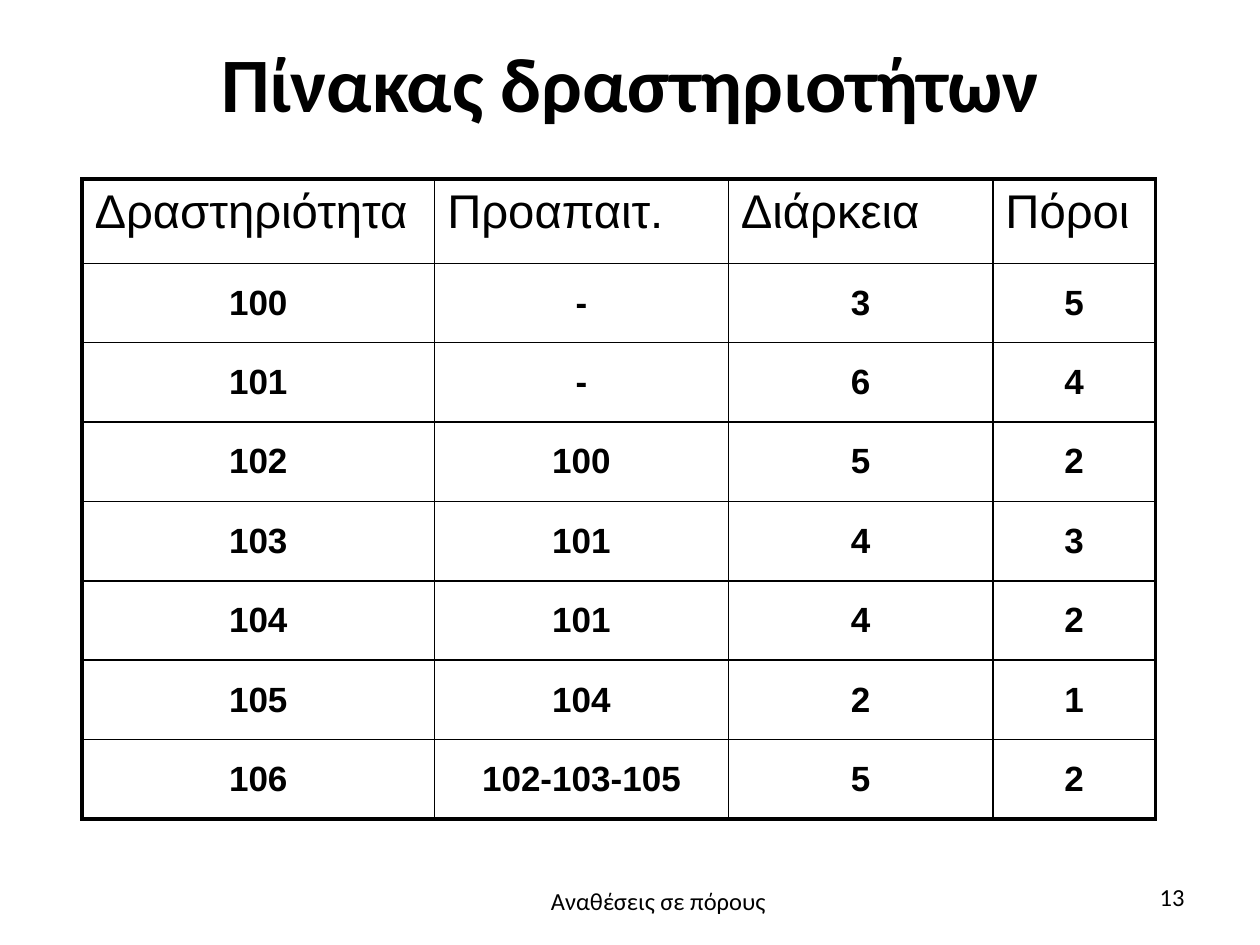
from lxml import etree
from pptx import Presentation
from pptx.dml.color import RGBColor
from pptx.enum.text import MSO_ANCHOR as Anchor, PP_ALIGN as Align
from pptx.oxml.ns import qn
from pptx.util import Inches, Pt

COLORS = {"text": "000000", "border": "000000", "background": "FFFFFF"}
HEADERS = ["Δραστηριότητα", "Προαπαιτ.", "Διάρκεια", "Πόροι"]
ACTIVITIES = [
    ["100", "-", "3", "5"],
    ["101", "-", "6", "4"],
    ["102", "100", "5", "2"],
    ["103", "101", "4", "3"],
    ["104", "101", "4", "2"],
    ["105", "104", "2", "1"],
    ["106", "102-103-105", "5", "2"],
]
COLUMN_WIDTHS = [2.8, 2.33, 2.1, 1.29]
HEADER_HEIGHT, ROW_HEIGHT = 0.67, 0.63
OUTER_LINE, INNER_LINE = 2.25, 1


def write_text(frame, text, size, font="Calibri", bold=False, align=Align.LEFT):
    paragraph = frame.paragraphs[0]
    paragraph.alignment = align
    run = paragraph.add_run()
    run.text = text
    run.font.name = font
    run.font.size = Pt(size)
    run.font.bold = bold
    run.font.color.rgb = RGBColor.from_string(COLORS["text"])


def set_borders(cell, widths):
    """Draw the cell's sides, given as (L, R, T, B) widths in points."""
    properties = cell._tc.get_or_add_tcPr()
    for index, (side, width) in enumerate(zip("LRTB", widths)):
        line = etree.Element(qn(f"a:ln{side}"), w=str(Pt(width)))
        fill = etree.SubElement(line, qn("a:solidFill"))
        etree.SubElement(fill, qn("a:srgbClr"), val=COLORS["border"])
        properties.insert(index, line)


def add_title(slide, left, top, width, height):
    title = slide.shapes.title
    title.left, title.top = Inches(left), Inches(top)
    title.width, title.height = Inches(width), Inches(height)
    frame = title.text_frame
    frame.word_wrap = True
    frame.vertical_anchor = Anchor.MIDDLE
    frame.margin_left = frame.margin_right = frame.margin_bottom = 0
    frame.margin_top = Inches(0.02)
    write_text(frame, "Πίνακας δραστηριοτήτων", 44, bold=True, align=Align.CENTER)


def add_activity_table(slide, left, top):
    rows = [HEADERS] + ACTIVITIES
    heights = [HEADER_HEIGHT] + [ROW_HEIGHT] * len(ACTIVITIES)
    table = slide.shapes.add_table(
        len(rows), len(HEADERS), Inches(left), Inches(top),
        Inches(sum(COLUMN_WIDTHS)), Inches(sum(heights))).table
    table.first_row = table.horz_banding = False
    for column, width in zip(table.columns, COLUMN_WIDTHS):
        column.width = Inches(width)

    last_row, last_column = len(rows) - 1, len(HEADERS) - 1
    for r, values in enumerate(rows):
        table.rows[r].height = Inches(heights[r])
        for c, value in enumerate(values):
            cell = table.cell(r, c)
            cell.fill.background()
            on_edge = (c == 0, c == last_column, r == 0, r == last_row)
            set_borders(cell, [OUTER_LINE if edge else INNER_LINE for edge in on_edge])
            if r == 0:
                write_text(cell.text_frame, value, 27, font="Arial")
            else:
                cell.vertical_anchor = Anchor.MIDDLE
                write_text(cell.text_frame, value, 20, font="Arial", bold=True,
                           align=Align.CENTER)


def add_footer_text(slide, text, align, left, top, width, height):
    box = slide.shapes.add_textbox(
        Inches(left), Inches(top), Inches(width), Inches(height))
    box.text_frame.word_wrap = True
    write_text(box.text_frame, text, 14, align=align)


def main():
    presentation = Presentation()
    presentation.slide_width, presentation.slide_height = Inches(10), Inches(7.5)
    slide = presentation.slides.add_slide(presentation.slide_layouts[5])
    background = slide.background.fill
    background.solid()
    background.fore_color.rgb = RGBColor.from_string(COLORS["background"])

    # Title
    add_title(slide, 0.51, 0.04, 8.99, 1.19)
    # Activities with prerequisites, duration and resources
    add_activity_table(slide, 0.65, 1.42)
    # Footer and slide number
    add_footer_text(slide, "Αναθέσεις σε πόρους", Align.CENTER, 3.48, 6.98, 3.49, 0.55)
    add_footer_text(slide, "13", Align.RIGHT, 7.17, 6.95, 2.33, 0.4)

    presentation.save("out.pptx")


if __name__ == "__main__":
    main()
